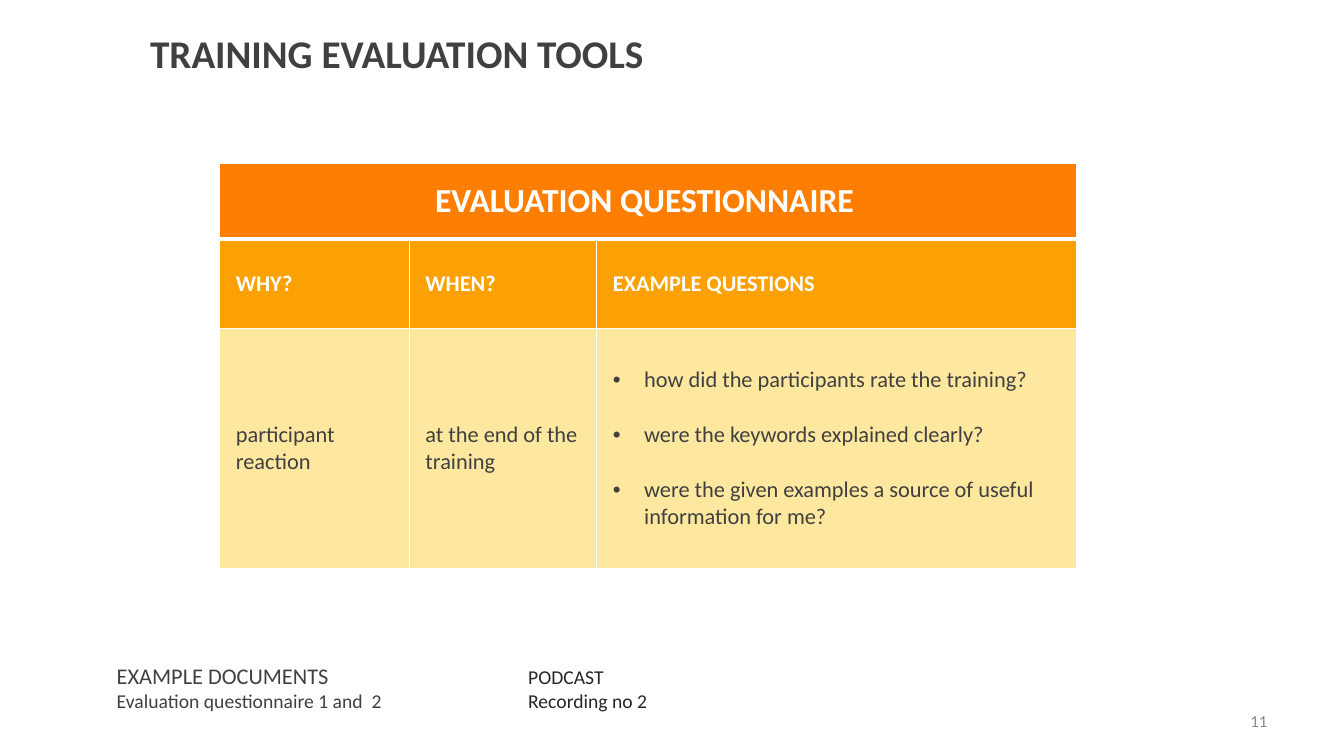
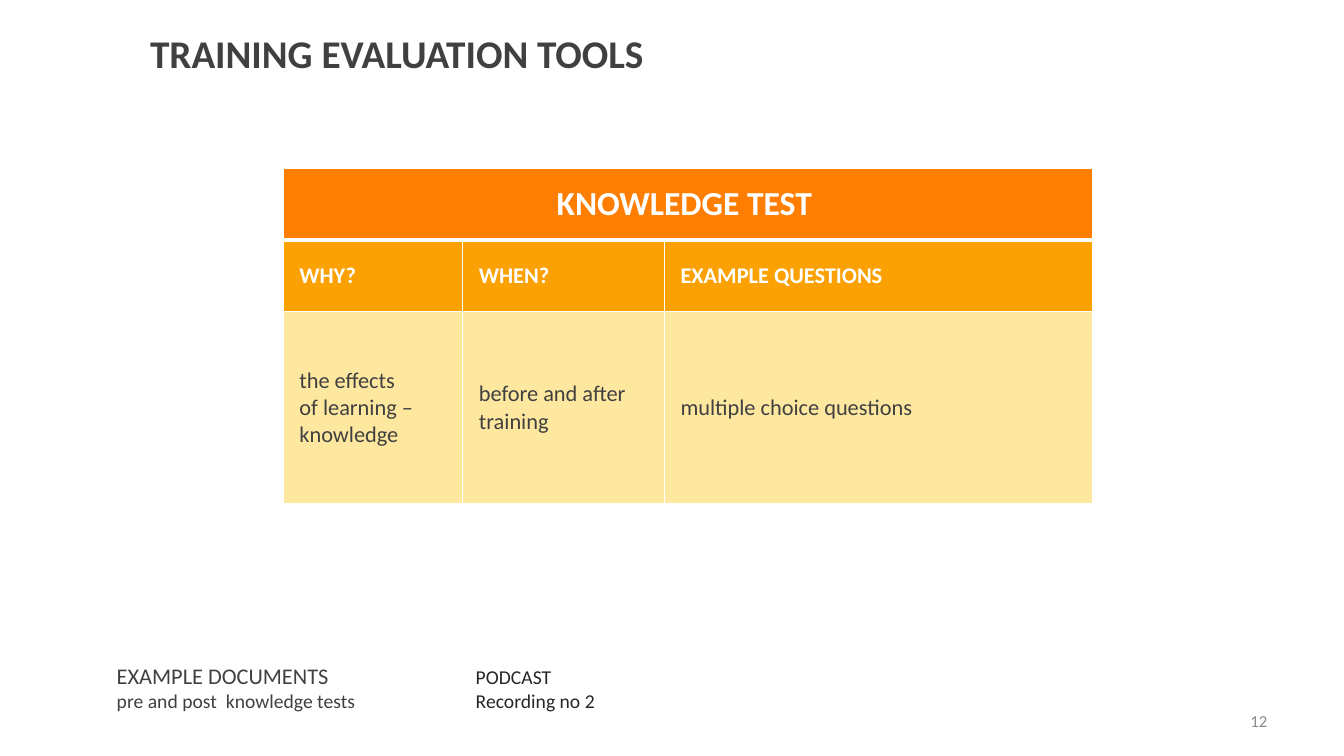
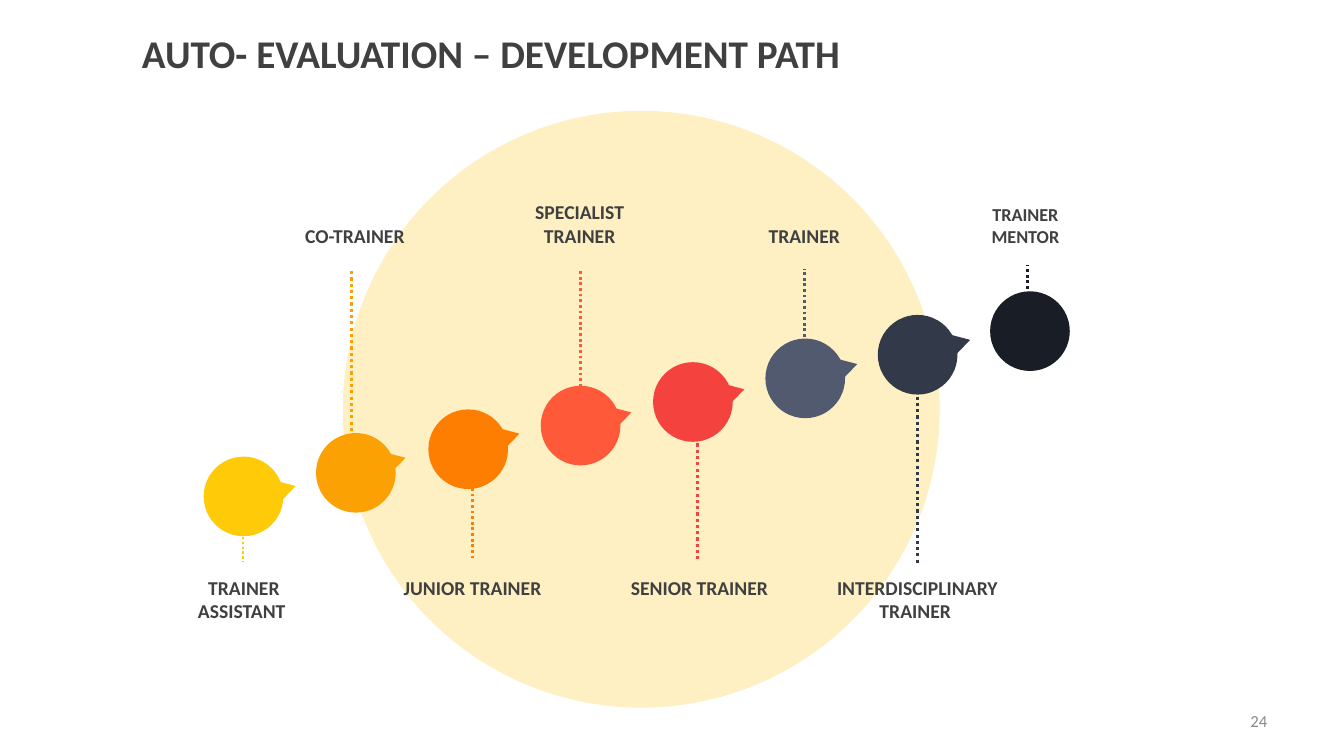
from dataclasses import dataclass
from itertools import product

from lxml import etree
from pptx import Presentation
from pptx import util as u
from pptx.dml.color import RGBColor
from pptx.enum import dml, shapes, text
from pptx.oxml import ns


@dataclass(frozen=True)
class Theme:
    font: str = "Calibri"
    ink: str = "404040"
    dark: str = "262626"
    grey: str = "898989"
    white: str = "FFFFFF"
    orange: str = "FE7E01"
    amber: str = "FBA103"
    cream: str = "FEE8A0"
    disc: str = "FEF0C2"
    title: float = 28
    banner: float = 24
    body: float = 16
    note: float = 14
    small: float = 13
    number: float = 12


T = Theme()
ALIGN = text.PP_ALIGN
MIDDLE = text.MSO_ANCHOR.MIDDLE
SHAPE = shapes.MSO_SHAPE

STAGE_LEFT, STAGE_TOP, STAGE_SIZE = 2.02, 4.53, 0.79
STEP_X, STEP_Y = 7.8 / 7, -1.64 / 7
UPPER_BOTTOM, LOWER_TOP = 2.51, 5.66

# label lines, colour, label centre, above, label size,
# dotted line (x, start, end, weight), pointer (left, top)
STAGES = [
    (["TRAINER", "ASSISTANT "], "FFCA08", 2.42, False, T.note,
     (2.41, 4.69, 5.57, 1.75), (2.75, 4.76)),
    (["CO-TRAINER"], T.amber, 3.52, True, T.note,
     (3.49, 2.69, 4.49, 2.25), (3.84, 4.48)),
    (["JUNIOR TRAINER "], T.orange, 4.71, False, T.note,
     (4.69, 5.54, 4.69, 2), (4.97, 4.24)),
    (["SPECIALIST", "TRAINER"], "FE5938", 5.75, True, T.note,
     (5.76, 2.69, 4.01, 2), (6.08, 4.03)),
    (["SENIOR TRAINER "], "F4433E", 6.96, False, T.note,
     (6.92, 5.55, 3.91, 2.25), (7.2, 3.8)),
    (["TRAINER "], "515A6F", 8, True, T.note,
     (7.98, 3.51, 2.67, 2), (8.32, 3.55)),
    (["INTERDISCIPLINARY", "TRAINER "], "323948", 9.1, False, T.note,
     (9.1, 3.81, 5.61, 2.25), (9.44, 3.31)),
    (["TRAINER", "MENTOR"], "191D25", 10.17, True, T.small,
     (10.19, 3.48, 2.63, 2), None),
]


def set_attrs(obj, values):
    for name, value in values.items():
        setattr(obj, name, value)


def rgb(colour):
    return RGBColor.from_string(colour)


def inches(*lengths):
    return [u.Inches(n) for n in lengths]


def write(tf, lines, sizes, colour, bold=False, align=ALIGN.LEFT):
    """Fill a text frame, one paragraph per line and size."""
    for i, (line, size) in enumerate(zip(lines, sizes)):
        p = tf.paragraphs[0] if i == 0 else tf.add_paragraph()
        p.alignment = align
        r = p.add_run()
        r.text = line
        set_attrs(r.font, {"name": T.font, "size": u.Pt(size), "bold": bold})
        r.font.color.rgb = rgb(colour)


def add_text(s, box, lines, sizes, colour, wrap=False, anchor=text.MSO_ANCHOR.TOP, **style):
    tf = s.shapes.add_textbox(*inches(*box)).text_frame
    fit = text.MSO_AUTO_SIZE
    set_attrs(tf, {"word_wrap": wrap, "vertical_anchor": anchor,
                   "auto_size": fit.NONE if wrap else fit.SHAPE_TO_FIT_TEXT})
    write(tf, lines, sizes, colour, **style)


def add_slide(prs, title, number, title_left):
    s = prs.slides.add_slide(prs.slide_layouts[6])
    frame = {"wrap": True, "anchor": MIDDLE}
    add_text(s, (title_left, 0.21, 10.95, 0.62), [title], [T.title], T.ink, bold=True, **frame)
    add_text(s, (9.56, 6.95, 3.11, 0.4), [number], [T.number], T.grey,
             align=ALIGN.RIGHT, **frame)
    return s


def add_solid(s, kind, box, colour, rotation=0):
    sp = s.shapes.add_shape(kind, *inches(*box))
    sp.shadow.inherit = False
    sp.rotation = rotation
    sp.fill.solid()
    sp.fill.fore_color.rgb = rgb(colour)
    sp.line.fill.background()


def add_dotted_line(s, x, start, end, weight, colour):
    cx = s.shapes.add_connector(shapes.MSO_CONNECTOR.STRAIGHT, *inches(x, start, x, end))
    set_attrs(cx.line, {"width": u.Pt(weight), "dash_style": dml.MSO_LINE.ROUND_DOT})
    cx.line.color.rgb = rgb(colour)
    etree.SubElement(cx.element.spPr, ns.qn("a:effectLst"))


def style_cell(cell, colour, bottom, margins):
    """Give a cell white borders, a solid fill and its margins."""
    tcPr = cell._tc.get_or_add_tcPr()
    for tag, weight in (("lnL", 1), ("lnR", 1), ("lnT", 1), ("lnB", bottom)):
        ln = etree.SubElement(tcPr, ns.qn(f"a:{tag}"), w=str(u.Pt(weight)))
        fill = etree.SubElement(ln, ns.qn("a:solidFill"))
        etree.SubElement(fill, ns.qn("a:srgbClr"), val=T.white)
    cell.fill.solid()
    cell.fill.fore_color.rgb = rgb(colour)
    set_attrs(cell, {"vertical_anchor": MIDDLE, **margins})


def add_bullets(tf):
    for i, p in enumerate(tf.paragraphs):
        pPr = p._p.get_or_add_pPr()
        set_indent = {"marL": u.Inches(0.31), "indent": u.Inches(-0.31)}
        for name, value in set_indent.items():
            pPr.set(name, str(value))
        etree.SubElement(pPr, ns.qn("a:buFont"), typeface="Arial")
        etree.SubElement(pPr, ns.qn("a:buChar"), char="•")
        if i:
            p.space_before = u.Pt(19.5)


def add_tool_table(s, left, top, widths, heights, heading, answers):
    """Table of one evaluation tool: banner, column heads and answers."""
    frame = s.shapes.add_table(3, 3, *inches(left, top, sum(widths), sum(heights)))
    table = frame.table
    set_attrs(table, {"first_row": False, "horz_banding": False})
    for tracks, name, sizes in ((table.columns, "width", widths),
                                (table.rows, "height", heights)):
        for track, size in zip(tracks, sizes):
            setattr(track, name, u.Inches(size))
    wide = {f"margin_{side}": u.Inches(0.16) for side in ("left", "top", "right", "bottom")}
    for row, col in product(range(3), range(3)):
        style_cell(table.cell(row, col), (T.orange, T.amber, T.cream)[row],
                   1 if row else 3, wide if row else {})
    banner = table.cell(0, 0)
    banner.merge(table.cell(0, 2))
    write(banner.text_frame, [heading], [T.banner], T.white, bold=True, align=ALIGN.CENTER)
    heads = ("WHY?", "WHEN?", "EXAMPLE QUESTIONS")
    for col, (head, lines) in enumerate(zip(heads, answers)):
        write(table.cell(1, col).text_frame, [head], [T.body], T.white, bold=True)
        write(table.cell(2, col).text_frame, lines, [T.body] * len(lines), T.ink)
    if len(answers[2]) > 1:
        add_bullets(table.cell(2, 2).text_frame)


def add_tool_slide(prs, number, documents, documents_width, podcast_left, **table):
    s = add_slide(prs, "TRAINING EVALUATION TOOLS", number, 1.39)
    add_text(s, (1.06, 6.52, documents_width, 0.61), ["EXAMPLE DOCUMENTS", documents],
             [T.body, T.note], T.ink)
    add_text(s, (podcast_left, 6.55, 1.39, 0.57), ["PODCAST", "Recording no 2"],
             [T.note] * 2, T.dark)
    add_tool_table(s, **table)


def add_stage(s, i, lines, colour, centre, above, size, dots, pointer):
    add_solid(s, SHAPE.FLOWCHART_CONNECTOR,
              (STAGE_LEFT + i * STEP_X, STAGE_TOP + i * STEP_Y, STAGE_SIZE, STAGE_SIZE), colour)
    add_dotted_line(s, *dots, colour)
    if pointer:
        add_solid(s, SHAPE.ISOSCELES_TRIANGLE, (*pointer, 0.2, 0.17), colour, 74.3)
    width, height = 1.8, 0.1 + len(lines) * size * 1.22 / 72
    top = UPPER_BOTTOM - height if above else LOWER_TOP
    add_text(s, (centre - width / 2, top, width, height), lines, [size] * len(lines),
             T.ink, bold=True, align=ALIGN.CENTER)


def add_path_slide(prs):
    s = add_slide(prs, "AUTO- EVALUATION – DEVELOPMENT PATH", "24", 1.31)
    add_solid(s, SHAPE.FLOWCHART_CONNECTOR, (3.4, 1.1, 5.92, 5.92), T.disc)
    for i, stage in enumerate(STAGES):
        add_stage(s, i, *stage)


def main():
    prs = Presentation()
    set_attrs(prs, {"slide_width": u.Inches(13.33), "slide_height": u.Inches(7.5)})
    add_tool_slide(
        prs, "11", "Evaluation questionnaire 1 and  2", 2.86, 5.14,
        left=2.18, top=1.62, widths=(1.88, 1.86, 4.76), heights=(0.75, 0.89, 2.38),
        heading="EVALUATION QUESTIONNAIRE ",
        answers=(["participant reaction"], ["at the end of the training"],
                 ["how did the participants rate the training?",
                  "were the keywords explained clearly?",
                  "were the given examples a source of useful information for me?"]))
    add_tool_slide(
        prs, "12", "pre and post  knowledge tests", 2.64, 4.62,
        left=2.81, top=1.67, widths=(1.78, 2, 4.25), heights=(0.71, 0.71, 1.91),
        heading="KNOWLEDGE TEST ",
        answers=(["the effects", "of learning –knowledge"], ["before and after training"],
                 ["multiple choice questions"]))
    add_path_slide(prs)
    prs.save("out.pptx")


if __name__ == "__main__":
    main()
